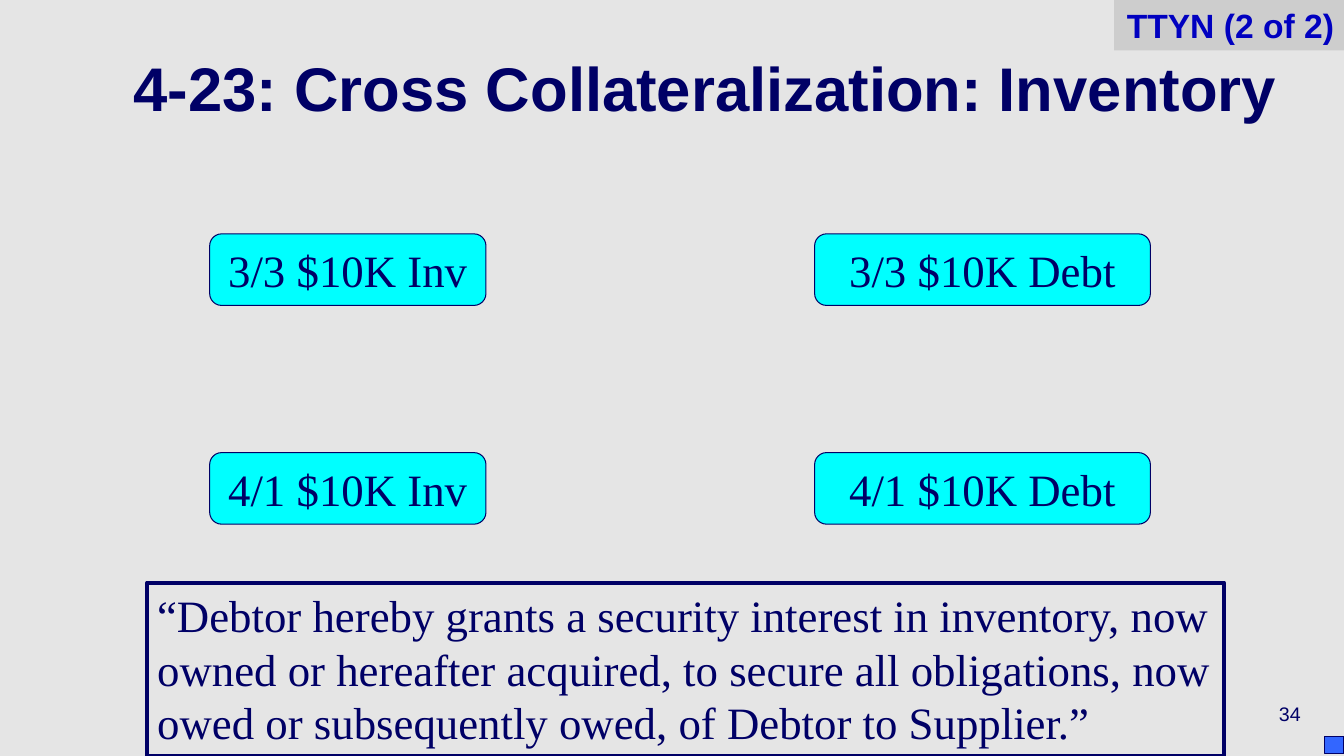
from pptx import Presentation
from pptx.dml.color import RGBColor
from pptx.enum.shapes import MSO_SHAPE
from pptx.enum.text import MSO_ANCHOR, PP_ALIGN
from pptx.util import Inches, Pt

WIDTH, HEIGHT = 13.33, 7.5
NAVY, CYAN, BLUE = "000066", "00FFFF", "3366FF"
BACKGROUND, BANNER_GRAY, BANNER_BLUE = "E5E5E5", "CDCDCD", "0000C0"
SANS, SERIF = "Arial", "Times New Roman"

# Each column: what it lists, left edge and width; each row: date and top edge
COLUMNS = [("Inv", 2.08, 2.74), ("Debt", 8.08, 3.33)]
ROWS = [("3/3", 2.32), ("4/1", 4.49)]
ENTRY_HEIGHT = 0.71


def color(value):
    return RGBColor.from_string(value)


def write(shape, text, size=32, font=SERIF, ink=NAVY, bold=False,
          align=PP_ALIGN.LEFT, anchor=MSO_ANCHOR.TOP, wrap=True, spacing=None):
    frame = shape.text_frame
    frame.word_wrap = wrap
    frame.vertical_anchor = anchor
    frame.margin_left = frame.margin_right = Inches(0.1)
    frame.margin_top = frame.margin_bottom = Inches(0.05)
    paragraph = frame.paragraphs[0]
    paragraph.alignment = align
    paragraph.line_spacing = spacing
    run = paragraph.add_run()
    run.text = text
    run.font.size = Pt(size)
    run.font.name = font
    run.font.bold = bold
    run.font.color.rgb = color(ink)


def add_text(slide, text, left, top, width, height, **style):
    box = slide.shapes.add_textbox(
        Inches(left), Inches(top), Inches(width), Inches(height))
    write(box, text, **style)


def add_box(slide, left, top, width, height, fill=None, line_width=None,
            preset=MSO_SHAPE.RECTANGLE):
    shape = slide.shapes.add_shape(
        preset, Inches(left), Inches(top), Inches(width), Inches(height))
    shape.shadow.inherit = False
    if fill:
        shape.fill.solid()
        shape.fill.fore_color.rgb = color(fill)
    else:
        shape.fill.background()
    if line_width:
        shape.line.color.rgb = color(NAVY)
        shape.line.width = Pt(line_width)
    else:
        shape.line.fill.background()
    return shape


def add_entries(slide):
    """Lay out the dated inventory and debt amounts as a grid."""
    for date, top in ROWS:
        for kind, left, width in COLUMNS:
            entry = add_box(slide, left, top, width, ENTRY_HEIGHT, CYAN, 0.75,
                            MSO_SHAPE.FLOWCHART_ALTERNATE_PROCESS)
            write(entry, f"{date} $10K {kind}", align=PP_ALIGN.CENTER,
                  anchor=MSO_ANCHOR.MIDDLE, wrap=False)


def main():
    presentation = Presentation()
    presentation.slide_width = Inches(WIDTH)
    presentation.slide_height = Inches(HEIGHT)
    slide = presentation.slides.add_slide(presentation.slide_layouts[6])
    slide.background.fill.solid()
    slide.background.fill.fore_color.rgb = color(BACKGROUND)

    add_text(slide, "34", 10.22, 6.83, 2.78, 0.5, size=14, font=SANS,
             align=PP_ALIGN.RIGHT, anchor=MSO_ANCHOR.MIDDLE)
    add_text(slide, "4-23: Cross Collateralization: Inventory",
             0.89, 0.33, 12.22, 1.25, size=44, font=SANS, bold=True,
             align=PP_ALIGN.CENTER, anchor=MSO_ANCHOR.MIDDLE, spacing=0.7)
    add_entries(slide)

    clause = add_box(slide, 1.46, 5.78, 10.68, 1.72, line_width=3)
    write(clause, "“Debtor hereby grants a security interest in inventory, now "
          "owned or hereafter acquired, to secure all obligations, now owed or "
          "subsequently owed, of Debtor to Supplier.”")

    add_box(slide, WIDTH - 0.19, 7.31, 0.19, 0.17, BLUE, 0.75)
    banner = add_box(slide, WIDTH - 2.28, 0, 2.28, 0.5, BANNER_GRAY)
    write(banner, "TTYN (2 of 2)", size=24, font=SANS, ink=BANNER_BLUE,
          bold=True, align=PP_ALIGN.RIGHT, wrap=False)

    presentation.save("out.pptx")


if __name__ == "__main__":
    main()
